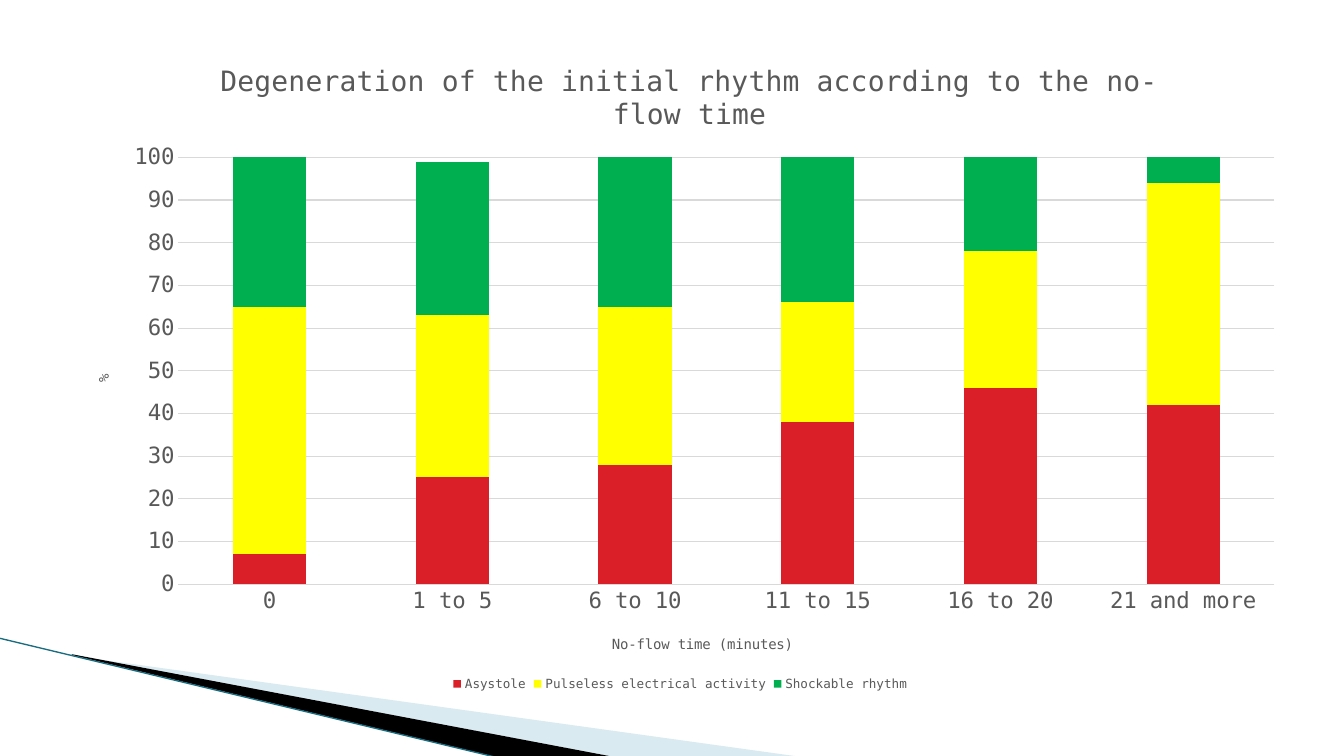
from dataclasses import dataclass

import pptx
import pptx.chart.data
import pptx.dml.color
import pptx.enum.chart
import pptx.enum.shapes
import pptx.oxml
import pptx.oxml.ns
import pptx.util
from lxml import etree

Pt = pptx.util.Pt
qn = pptx.oxml.ns.qn
FONT = "DejaVu Sans Mono"
GREY = "595959"
PALE_GREY = "D9D9D9"


@dataclass
class Wedge:
    points: list[tuple[float, float]]
    color: str
    opacity: int = 100


@dataclass
class Rhythm:
    name: str
    values: list[int]
    color: str


WEDGES = [
    Wedge([(52.56, 468.5), (571, 540.5), (437.8, 540.5), (52.56, 468)], "A0CBDC", 40),
    Wedge([(51.1, 467.3), (438.5, 540.7), (357.1, 541.4), (51.8, 468)], "000000"),
]
NO_FLOW_TIMES = ["0", "1 to 5", "6 to 10", "11 to 15", "16 to 20", "21 and more"]
RHYTHMS = [
    Rhythm("Asystole", [7, 25, 28, 38, 46, 42], "DA1F28"),
    Rhythm("Pulseless electrical activity", [58, 38, 37, 28, 32, 52], "FFFF00"),
    Rhythm("Shockable rhythm", [35, 36, 35, 34, 22, 6], "00B050"),
]


def set_color(target, color: str) -> None:
    """Colour a fill, or the fill of a line."""
    target.solid()
    target.fore_color.rgb = pptx.dml.color.RGBColor.from_string(color)


def format_font(font, size: float, color: str = GREY) -> None:
    font.name = FONT
    font.size = Pt(size)
    font.bold = False
    set_color(font.fill, color)


def write_text(frame, text: str, *, size: float, color: str = GREY) -> None:
    para = frame.paragraphs[0]
    span = para.add_run()
    span.text = text
    format_font(span.font, size, color)


def place(element, after: str | None = None, **fractions: float) -> None:
    """Place a chart part by fractions of the chart's size."""
    for old in element.findall(qn("c:layout")):
        element.remove(old)
    layout = etree.Element(qn("c:layout"))
    manual = etree.SubElement(layout, qn("c:manualLayout"))
    settings = {"xMode": "edge", "yMode": "edge", **fractions}
    if after is None:
        settings = {"layoutTarget": "inner", **settings}
        element.insert(0, layout)
    else:
        element.find(qn(after)).addnext(layout)
    for name, value in settings.items():
        etree.SubElement(manual, qn(f"c:{name}")).set("val", str(value))


def draw_wedge(page, wedge: Wedge) -> None:
    start, *others = wedge.points
    builder = page.shapes.build_freeform(Pt(start[0]), Pt(start[1]))
    builder.add_line_segments([(Pt(x), Pt(y)) for x, y in others])
    shape = builder.convert_to_shape()
    shape.shadow.inherit = False
    set_color(shape.fill, wedge.color)
    shape.line.fill.background()
    if wedge.opacity < 100:
        tint = shape._element.spPr.find(f".//{qn('a:srgbClr')}")
        etree.SubElement(tint, qn("a:alpha")).set("val", str(wedge.opacity * 1000))


def draw_edge(page) -> None:
    edge = page.shapes.add_connector(
        pptx.enum.shapes.MSO_CONNECTOR.STRAIGHT, Pt(-0.7), Pt(455.8), Pt(356.4), Pt(541.4))
    set_color(edge.line.fill, "1A6D80")
    edge.line.width = Pt(0.95)
    etree.SubElement(edge._element.spPr, qn("a:effectLst"))


def format_axis(axis, title: str, x: float, y: float) -> None:
    write_text(axis.axis_title.text_frame, title, size=10)
    place(axis.axis_title._element, "c:tx", x=x, y=y)
    axis.major_tick_mark = pptx.enum.chart.XL_TICK_MARK.NONE
    axis.minor_tick_mark = pptx.enum.chart.XL_TICK_MARK.NONE
    format_font(axis.tick_labels.font, 16)


def draw_chart(page) -> None:
    data = pptx.chart.data.CategoryChartData()
    data.categories = NO_FLOW_TIMES
    for rhythm in RHYTHMS:
        data.add_series(rhythm.name, rhythm.values)
    chart = page.shapes.add_chart(
        pptx.enum.chart.XL_CHART_TYPE.COLUMN_STACKED,
        Pt(48.2), Pt(21.6), Pt(879.8), Pt(478), data).chart
    format_font(chart.font, 10, "000000")

    # Title
    write_text(chart.chart_title.text_frame,
               "Degeneration of the initial rhythm according to the no-flow time", size=20)
    place(chart.chart_title._element, "c:tx", x=0.12, y=0.04)

    # Columns
    plot = chart.plots[0]
    plot.gap_width = 150
    plot.overlap = 100
    plot.vary_by_categories = False
    for series, rhythm in zip(plot.series, RHYTHMS):
        set_color(series.format.fill, rhythm.color)
    place(chart._chartSpace.chart.plotArea, x=0.09, y=0.19, w=0.89, h=0.638)

    # Axes
    format_axis(chart.category_axis, "No-flow time (minutes)", 0.44, 0.9)
    set_color(chart.category_axis.format.line.fill, PALE_GREY)
    chart.category_axis.format.line.width = Pt(0.75)
    percent = chart.value_axis
    format_axis(percent, "%", 0.02, 0.51)
    percent.axis_title.text_frame._txBody.bodyPr.set("rot", "-5400000")
    percent.minimum_scale, percent.maximum_scale, percent.major_unit = 0, 100, 10
    percent.format.line.fill.background()
    set_color(percent.major_gridlines.format.line.fill, PALE_GREY)
    percent.major_gridlines.format.line.width = Pt(0.75)

    # Legend
    chart.has_legend = True
    chart.legend.position = pptx.enum.chart.XL_LEGEND_POSITION.BOTTOM
    chart.legend.include_in_layout = False
    format_font(chart.legend.font, 9)
    place(chart.legend._element, "c:legendPos", x=0.31, y=0.96)


def main() -> None:
    deck = pptx.Presentation()
    deck.slide_width, deck.slide_height = Pt(960), Pt(540)
    page = deck.slides.add_slide(deck.slide_layouts[6])
    set_color(page.background.fill, "FFFFFF")
    for wedge in WEDGES:
        draw_wedge(page, wedge)
    draw_edge(page)
    draw_chart(page)
    deck.save("out.pptx")


if __name__ == "__main__":
    main()
